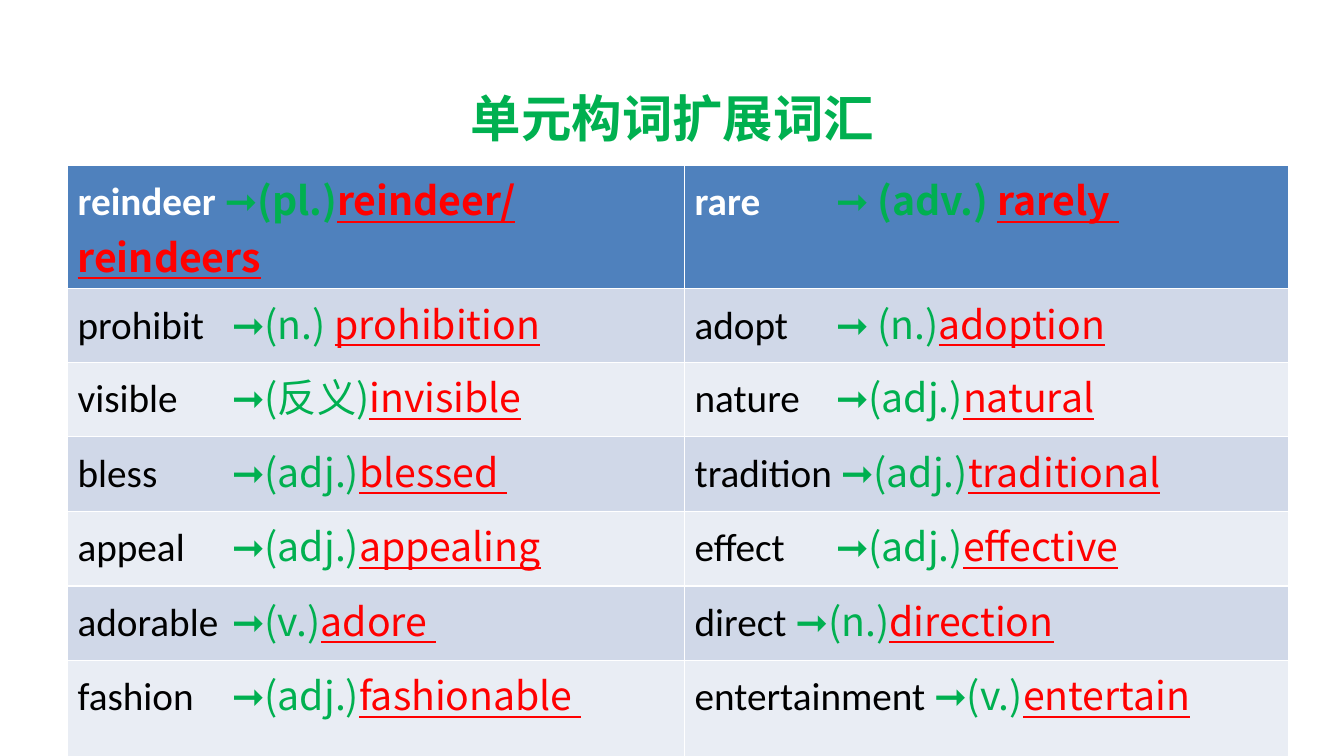
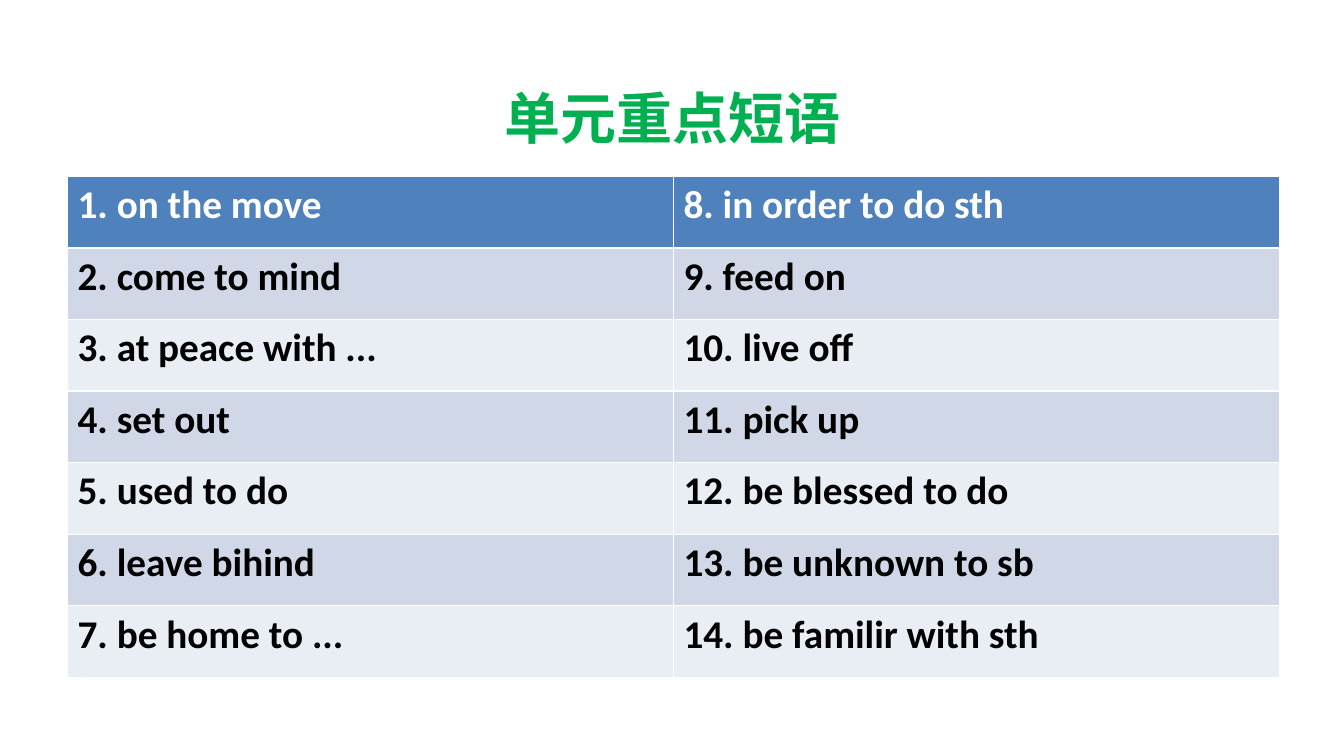
from lxml import etree
from pptx import Presentation
from pptx.dml.color import RGBColor
from pptx.enum.text import MSO_ANCHOR, PP_ALIGN
from pptx.oxml.ns import qn
from pptx.util import Inches, Pt

CJK_FONT, LATIN_FONT = "Noto Sans CJK SC", "Calibri"
GREEN, RED, WHITE, BLACK = "00B050", "FF0000", "FFFFFF", "000000"
HEADER_FILL, BAND_FILLS = "4F81BD", ("D0D8E8", "E9EDF4")
TABLE_LEFT = 0.67
TEXT_SIZE = 28

# Each entry: word with its gap, arrow with word class, derived word
WORD_ROWS = [
    (("reindeer ", "➞(pl.)", "reindeer/ reindeers"), ("rare\t", "➞ (adv.) ", "rarely ")),
    (("prohibit\t", "➞(n.) ", "prohibition"), ("adopt\t", "➞ (n.)", "adoption")),
    (("visible\t", "➞(反义)", "invisible"), ("nature\t", "➞(adj.)", "natural")),
    (("bless\t", "➞(adj.)", "blessed "), ("tradition ", "➞(adj.)", "traditional")),
    (("appeal\t", "➞(adj.)", "appealing"), ("effect\t", "➞(adj.)", "effective")),
    (("adorable\t", "➞(v.)", "adore "), ("direct ", "➞(n.)", "direction")),
    (("fashion\t", "➞(adj.)", "fashionable "), ("entertainment ", "➞(v.)", "entertain")),
]
PHRASES = [
    "on the move", "come to mind", "at peace with ...", "set out",
    "used to do", "leave bihind", "be home to ...",
    "in order to do sth", "feed on", "live off", "pick up",
    "be blessed to do", "be unknown to sb", "be familir with sth",
]
ARROW_TABS = (1.53, 1.4)


def rgb(value):
    return RGBColor.from_string(value)


def format_run(run, color, font_name=LATIN_FONT, size=TEXT_SIZE, bold=False, underline=False):
    font = run.font
    font.size, font.name, font.bold = Pt(size), font_name, bold
    font.color.rgb = rgb(color)
    if underline:
        font.underline = True
    latin = run._r.get_or_add_rPr().find(qn("a:latin"))
    east_asian = etree.Element(qn("a:ea"), typeface=CJK_FONT)
    latin.addnext(east_asian)


def add_tab_stop(paragraph, position):
    tabs = etree.SubElement(paragraph._p.get_or_add_pPr(), qn("a:tabLst"))
    etree.SubElement(tabs, qn("a:tab"), pos=str(Inches(position)), algn="l")


def style_layout(layout):
    """Place the title once for every slide that uses the layout."""
    title = layout.placeholders[0]
    title.left, title.top = Inches(TABLE_LEFT), Inches(0.66)
    title.width, title.height = Inches(12), Inches(1)
    title.text_frame.vertical_anchor = MSO_ANCHOR.MIDDLE


def add_titled_slide(presentation, layout, text, size):
    slide = presentation.slides.add_slide(layout)
    paragraph = slide.shapes.title.text_frame.paragraphs[0]
    paragraph.text = text
    paragraph.alignment = PP_ALIGN.CENTER
    format_run(paragraph.runs[0], GREEN, CJK_FONT, size, bold=True)
    return slide


def add_banded_table(slide, top, column_widths, row_heights):
    frame = slide.shapes.add_table(
        len(row_heights), len(column_widths), Inches(TABLE_LEFT), Inches(top),
        Inches(sum(column_widths)), Inches(sum(row_heights)))
    table = frame.table
    for column, width in zip(table.columns, column_widths):
        column.width = Inches(width)
    for index, (row, height) in enumerate(zip(table.rows, row_heights)):
        row.height = Inches(height)
        for cell in row.cells:
            cell.fill.solid()
            cell.fill.fore_color.rgb = rgb(BAND_FILLS[(index - 1) % 2] if index else HEADER_FILL)
    return table


def add_word_slide(presentation, layout):
    slide = add_titled_slide(presentation, layout, "单元构词扩展词汇", 36)
    table = add_banded_table(slide, 1.64, (6.12, 5.99), [1.03, 0.73] + [0.74] * 4 + [1.05])
    for row_index, entries in enumerate(WORD_ROWS):
        is_header = row_index == 0
        styles = [
            (WHITE if is_header else BLACK, LATIN_FONT, False),
            (GREEN, CJK_FONT, False),
            (RED, CJK_FONT, True),
        ]
        for column_index, parts in enumerate(entries):
            paragraph = table.cell(row_index, column_index).text_frame.paragraphs[0]
            add_tab_stop(paragraph, ARROW_TABS[column_index])
            for text, (color, font_name, underline) in zip(parts, styles):
                run = paragraph.add_run()
                run.text = text
                format_run(run, color, font_name, bold=is_header, underline=underline)


def add_phrase_slide(presentation, layout):
    slide = add_titled_slide(presentation, layout, "单元重点短语", 40)
    row_count = len(PHRASES) // 2
    table = add_banded_table(slide, 1.75, [6.01] * 2, [0.71] * row_count)
    for index, phrase in enumerate(PHRASES):
        column_index, row_index = divmod(index, row_count)
        paragraph = table.cell(row_index, column_index).text_frame.paragraphs[0]
        paragraph.text = f"{index + 1}. {phrase}"
        format_run(paragraph.runs[0], BLACK if row_index else WHITE, bold=True)


def main():
    presentation = Presentation()
    presentation.slide_width, presentation.slide_height = Inches(13.33), Inches(7.5)
    layout = presentation.slide_layouts.get_by_name("Title Only")
    style_layout(layout)
    add_word_slide(presentation, layout)
    add_phrase_slide(presentation, layout)
    presentation.save("out.pptx")


if __name__ == "__main__":
    main()
